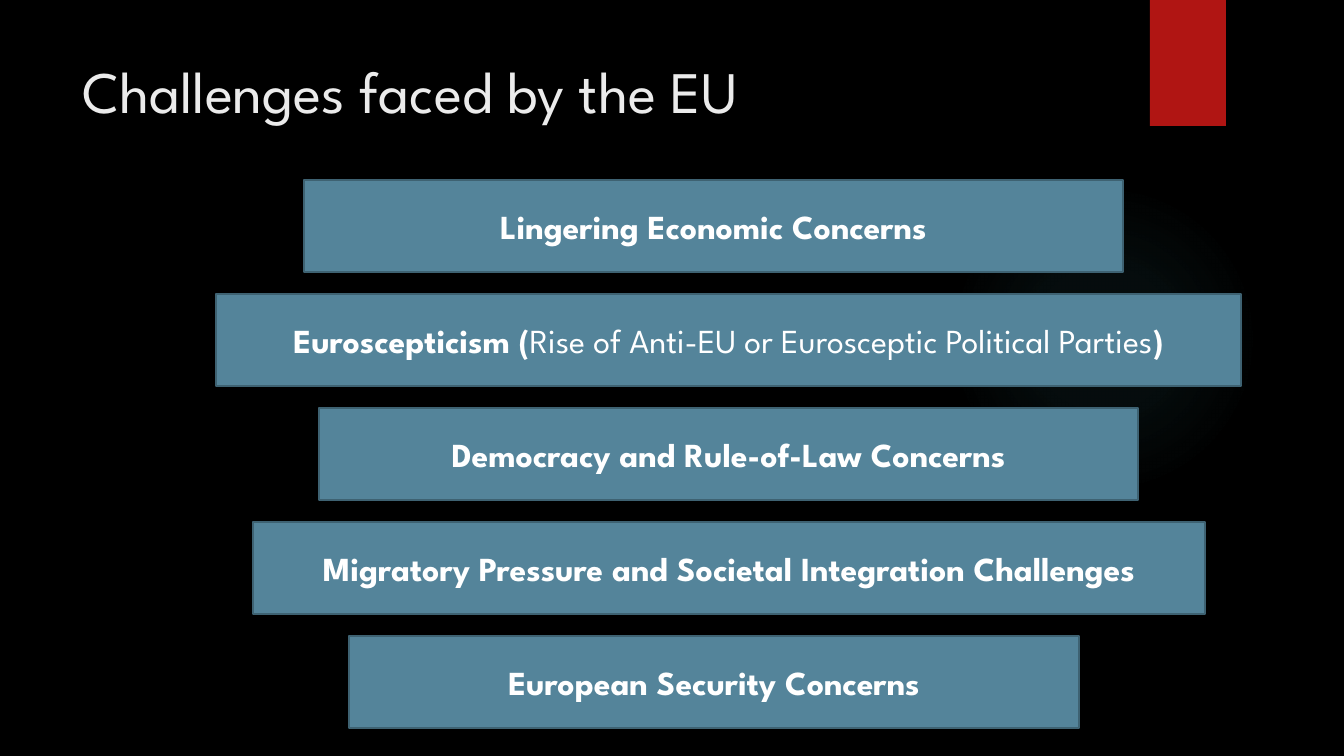
from pptx import Presentation
from pptx.dml.color import RGBColor
from pptx.enum.shapes import MSO_SHAPE as Shape
from pptx.enum.text import MSO_ANCHOR as Anchor, PP_ALIGN as Align
from pptx.oxml import parse_xml
from pptx.oxml.ns import nsdecls
from pptx.util import Pt

BLACK = RGBColor(0x00, 0x00, 0x00)
WHITE = RGBColor(0xFF, 0xFF, 0xFF)
PALE = RGBColor(0xEB, 0xEB, 0xEB)
RED = RGBColor(0xB0, 0x15, 0x13)
BLUE = RGBColor(0x54, 0x84, 0x9A)
EDGE = RGBColor(0x3E, 0x62, 0x72)
TEAL = RGBColor(0x50, 0xB9, 0xC1)
FACE = "League Spartan"
SCALE = 914400 / 100.8


def px(*nums):
    return [round(n * SCALE) for n in nums]


def write(para, text, size, color, bold):
    run = para.add_run()
    run.text = text
    run.font.color.rgb = color
    look = {"name": FACE, "size": Pt(size), "bold": bold}
    for key, val in look.items():
        setattr(run.font, key, val)


prs = Presentation()
prs.slide_width, prs.slide_height = px(1344, 756)
slide = prs.slides.add_slide(prs.slide_layouts[5])
slide.background.fill.solid()
slide.background.fill.fore_color.rgb = BLACK
shapes = slide.shapes

# Soft round glow
glow = shapes.add_shape(Shape.OVAL, *px(949, 184, 310, 310))
glow.shadow.inherit = False
glow.line.fill.background()
glow.fill.background()
stops = "".join(
    f'<a:gs pos="{pos * 1000}"><a:srgbClr val="{TEAL}">'
    f'<a:alpha val="{alpha * 1000}"/></a:srgbClr></a:gs>'
    for pos, alpha in [(0, 7), (36, 6), (69, 0)])
grad = parse_xml(
    f'<a:gradFill {nsdecls("a")}><a:gsLst>{stops}</a:gsLst><a:path path="circle">'
    '<a:fillToRect l="50000" t="50000" r="50000" b="50000"/></a:path></a:gradFill>')
props = glow.element.spPr
props.replace(props.find("{*}noFill"), grad)

# Red flag at the top
flag = shapes.add_shape(Shape.RECTANGLE, *px(1150, 0, 76, 126))
flag.shadow.inherit = False
flag.fill.solid()
flag.fill.fore_color.rgb = RED
flag.line.fill.background()

# Title
title = shapes.title
title.left, title.top, title.width, title.height = px(72, 50, 1037, 154)
frame = title.text_frame
frame.word_wrap = True
frame.vertical_anchor = Anchor.TOP
frame.paragraphs[0].alignment = Align.LEFT
write(frame.paragraphs[0], "Challenges faced by the EU", 42, PALE, False)

# Challenge bars: left, width, then runs that switch between bold and plain
bars = [
    (304, 819, ["Lingering Economic Concerns"]),
    (216, 1025, ["Euroscepticism (",
                 "Rise of Anti-EU or Eurosceptic Political Parties", ")"]),
    (319, 819, ["Democracy and Rule-of-Law Concerns"]),
    (253, 952, ["Migratory Pressure and Societal Integration Challenges"]),
    (349, 730, ["European Security Concerns"]),
]
for row, (left, width, texts) in enumerate(bars):
    bar = shapes.add_shape(Shape.RECTANGLE, *px(left, 180 + 114 * row, width, 92))
    bar.shadow.inherit = False
    bar.fill.solid()
    bar.fill.fore_color.rgb = BLUE
    bar.line.color.rgb = EDGE
    bar.line.width = Pt(1.5)
    frame = bar.text_frame
    frame.word_wrap = True
    frame.vertical_anchor = Anchor.MIDDLE
    para = frame.paragraphs[0]
    para.alignment = Align.CENTER
    for num, text in enumerate(texts):
        write(para, text, 24, WHITE, num % 2 == 0)

prs.save("out.pptx")
